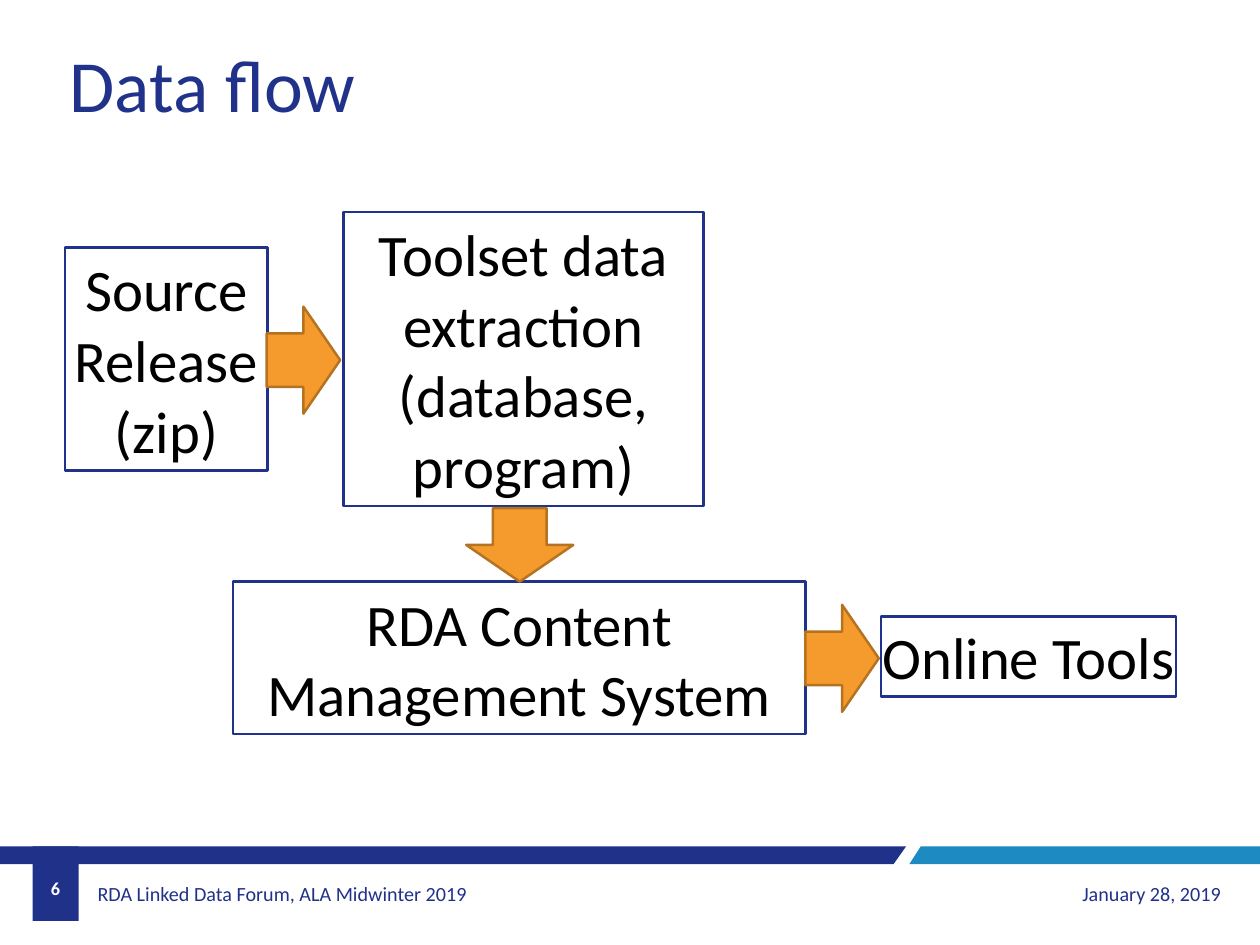
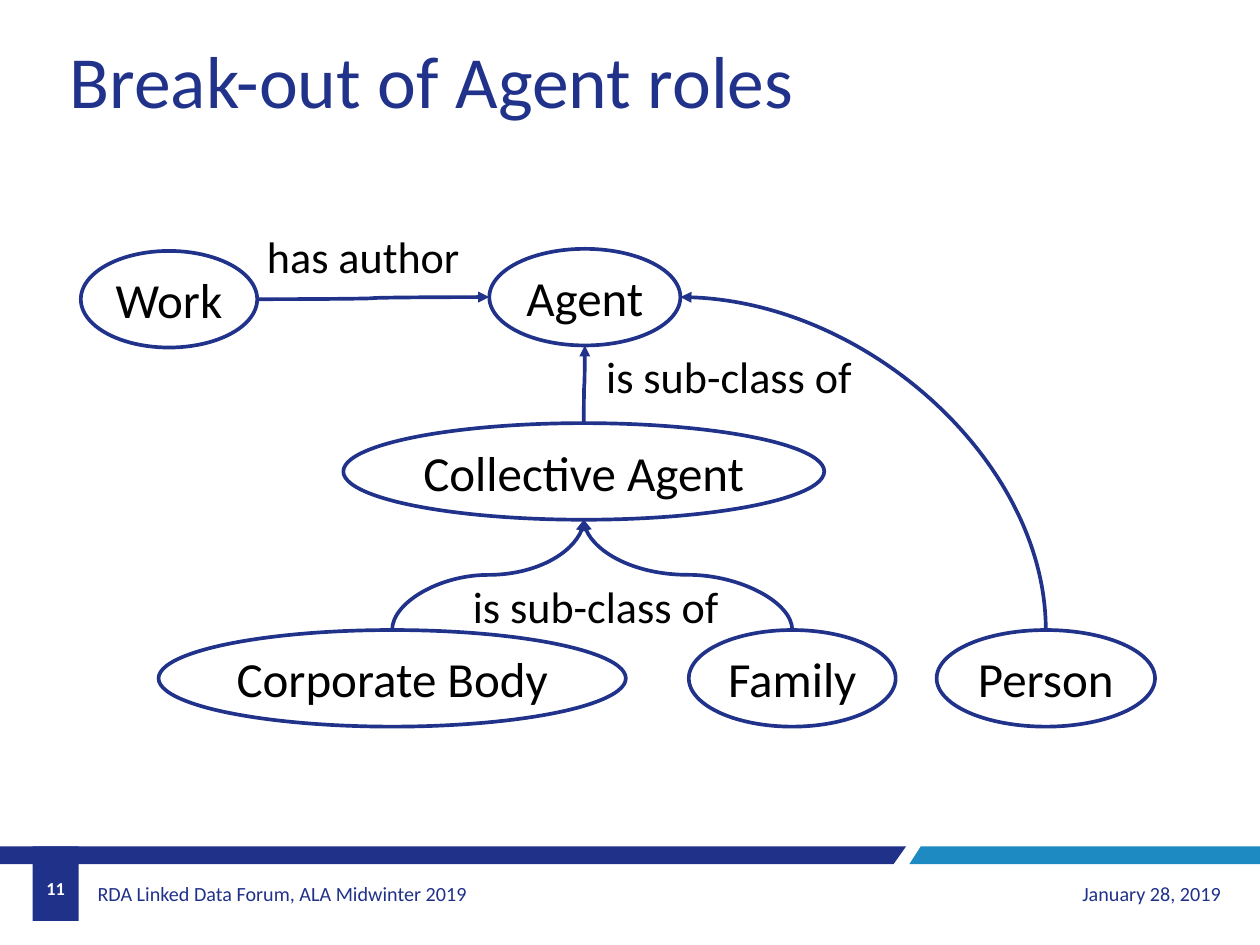
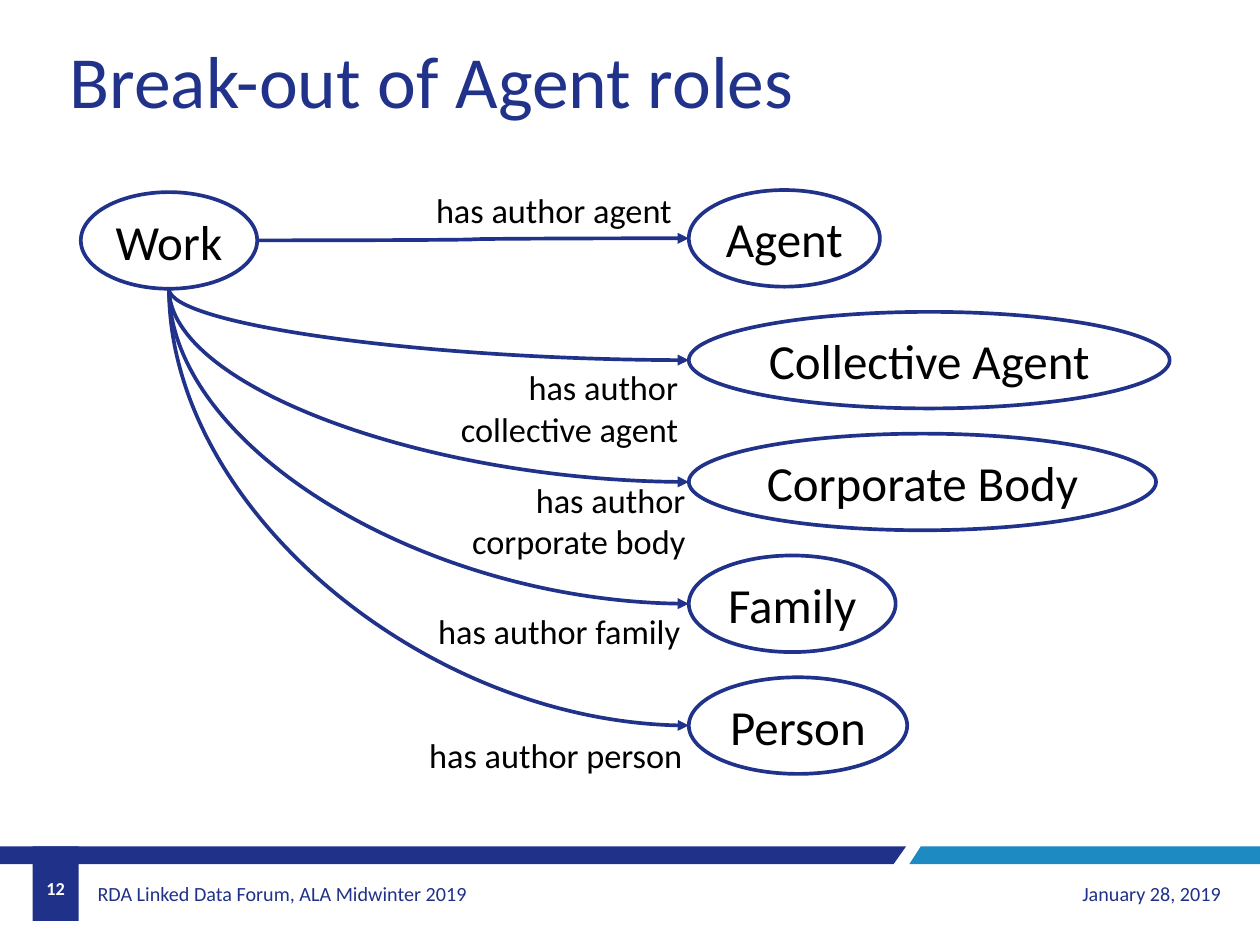
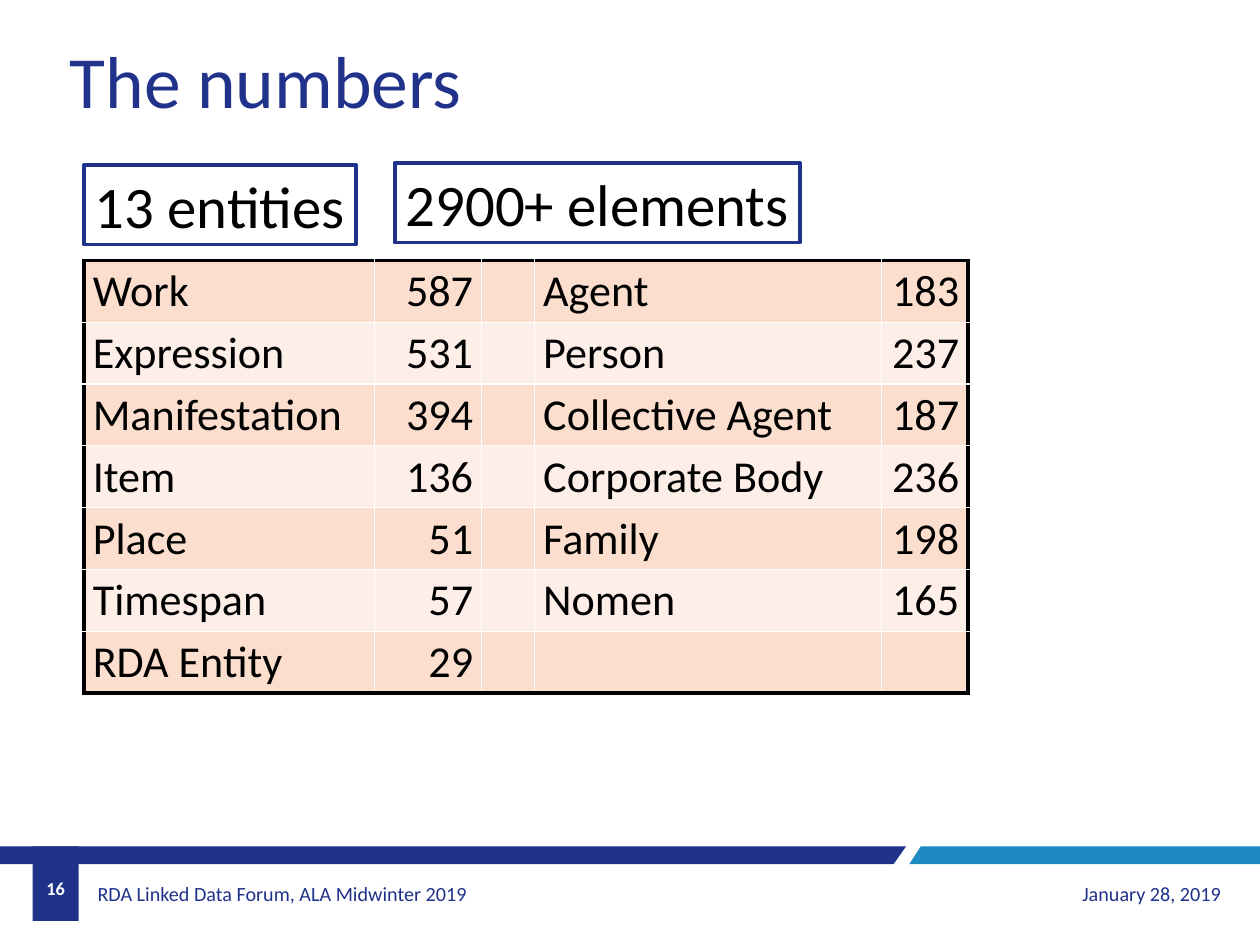
from dataclasses import dataclass
from typing import NamedTuple

from lxml.etree import SubElement
from pptx import Presentation
from pptx.dml.color import RGBColor
from pptx.enum.shapes import MSO_CONNECTOR, MSO_SHAPE
from pptx.enum.text import MSO_ANCHOR, PP_ALIGN
from pptx.oxml.ns import qn
from pptx.util import Emu, Inches, Pt

SLIDE_W, SLIDE_H = Inches(14.28), Inches(10.71)
GRID_COLS, GRID_ROWS = 120, 90
FONT = "Calibri"
NAVY, BAND, SKY = "21328A", "203189", "1D8BC1"
ORANGE, BROWN = "F59B2D", "B57321"
BLACK, WHITE = "000000", "FFFFFF"
PEACH, PALE = "FBDECD", "FDEFE8"
LEFT, CENTER, RIGHT = PP_ALIGN.LEFT, PP_ALIGN.CENTER, PP_ALIGN.RIGHT
TOP, MIDDLE = MSO_ANCHOR.TOP, MSO_ANCHOR.MIDDLE
BAND_TOP, BAND_BOTTOM = 80.6, 82.3
OVAL_H = 9.2
OVAL_W = {
    "Work": 16.8,
    "Agent": 18.2,
    "Collective Agent": 45.8,
    "Corporate Body": 44.5,
    "Family": 19.7,
    "Person": 20.8,
}
OVAL_SITES = {"top": 0, "left": 2, "bottom": 4, "right": 6}


class Box(NamedTuple):
    col: float
    row: float
    cols: float
    rows: float

    def emu(self) -> tuple:
        return x(self.col), y(self.row), x(self.cols), y(self.rows)


@dataclass
class Label:
    text: str
    box: Box
    size: float
    align: PP_ALIGN = LEFT
    color: str = BLACK
    bold: bool = False
    anchor: MSO_ANCHOR = TOP
    wrap: bool = False


@dataclass
class Frame:
    text: str
    box: Box
    line_width: float
    wrap: bool = False


class Arrow(NamedTuple):
    box: Box
    rotation: int = 0


class Oval(NamedTuple):
    name: str
    col: float
    row: float


class Link(NamedTuple):
    start: str
    start_side: str
    end: str
    end_side: str


def x(cols: float) -> Emu:
    return Emu(round(SLIDE_W * cols / GRID_COLS))


def y(rows: float) -> Emu:
    return Emu(round(SLIDE_H * rows / GRID_ROWS))


def rgb(color: str) -> RGBColor:
    return RGBColor.from_string(color)


def paint(sp, fill: str = "", line: str = "", width: float = 1) -> None:
    sp.shadow.inherit = False
    if fill:
        sp.fill.solid()
        sp.fill.fore_color.rgb = rgb(fill)
    else:
        sp.fill.background()
    if line:
        sp.line.color.rgb = rgb(line)
        sp.line.width = Pt(width)
    else:
        sp.line.fill.background()


def write(tf, text: str, size: float, color: str = BLACK,
          align: PP_ALIGN = LEFT, bold: bool = False) -> None:
    tf.text = text
    for p in tf.paragraphs:
        p.alignment = align
        for r in p.runs:
            r.font.name = FONT
            r.font.size = Pt(size)
            r.font.bold = bold
            r.font.color.rgb = rgb(color)


def add_label(s, label: Label):
    sp = s.shapes.add_textbox(*label.box.emu())
    tf = sp.text_frame
    write(tf, label.text, label.size, label.color, label.align, label.bold)
    tf.word_wrap = label.wrap
    tf.vertical_anchor = label.anchor
    return sp


def add_node(s, kind: MSO_SHAPE, frame: Frame, size: float):
    sp = s.shapes.add_shape(kind, *frame.box.emu())
    paint(sp, line=NAVY, width=frame.line_width)
    tf = sp.text_frame
    write(tf, frame.text, size, align=CENTER)
    tf.word_wrap = frame.wrap
    tf.vertical_anchor = MIDDLE
    return sp


def add_frame(s, frame: Frame) -> None:
    add_node(s, MSO_SHAPE.RECTANGLE, frame, 48)


def add_oval(s, oval: Oval):
    box = Box(oval.col, oval.row, OVAL_W[oval.name], OVAL_H)
    return add_node(s, MSO_SHAPE.OVAL, Frame(oval.name, box, 3), 40)


def add_arrow(s, arrow: Arrow) -> None:
    sp = s.shapes.add_shape(MSO_SHAPE.RIGHT_ARROW, *arrow.box.emu())
    paint(sp, ORANGE, BROWN, 2)
    sp.rotation = arrow.rotation


def side_point(sp, side: str) -> tuple:
    across = {"left": 0, "right": 2}.get(side, 1)
    down = {"top": 0, "bottom": 2}.get(side, 1)
    return sp.left + sp.width * across // 2, sp.top + sp.height * down // 2


def add_link(s, ovals: dict, link: Link) -> None:
    start, end = ovals[link.start], ovals[link.end]
    x1, y1 = side_point(start, link.start_side)
    x2, y2 = side_point(end, link.end_side)
    cx = s.shapes.add_connector(MSO_CONNECTOR.CURVE, x1, y1, x2, y2)
    cx.line.color.rgb = rgb(NAVY)
    cx.line.width = Pt(3)
    sp_pr = cx.element.spPr
    SubElement(sp_pr.find(qn("a:ln")), qn("a:tailEnd"), type="triangle")
    SubElement(sp_pr, qn("a:effectLst"))
    vertical_sides = ("top", "bottom")
    if link.start_side in vertical_sides:
        w, h = abs(y2 - y1), abs(x2 - x1)
        cx.left, cx.top = Emu((x1 + x2 - w) // 2), Emu((y1 + y2 - h) // 2)
        cx.width, cx.height = Emu(w), Emu(h)
        cx.rotation = 270
        xfrm = sp_pr.find(qn("a:xfrm"))
        xfrm.set("flipH", str(int(y2 > y1)))
        xfrm.set("flipV", str(int(x2 < x1)))
        if link.end_side not in vertical_sides:
            sp_pr.find(qn("a:prstGeom")).set("prst", "curvedConnector2")
    joints = cx.element.find(".//" + qn("p:cNvCxnSpPr"))
    for tag, sp, side in (("a:stCxn", start, link.start_side),
                          ("a:endCxn", end, link.end_side)):
        SubElement(joints, qn(tag), id=str(sp.shape_id), idx=str(OVAL_SITES[side]))


def add_ovals_and_links(s, ovals: list, links: list) -> None:
    shapes = {oval.name: add_oval(s, oval) for oval in ovals}
    for link in links:
        add_link(s, shapes, link)


def add_band(s, points: list, fill: str):
    corners = [(x(col), y(row)) for col, row in points]
    builder = s.shapes.build_freeform(*corners[0])
    builder.add_line_segments(corners[1:])
    sp = builder.convert_to_shape()
    paint(sp, fill)
    return sp


def fill_layout(layout, s) -> None:
    tab = s.shapes.add_shape(MSO_SHAPE.RECTANGLE, *Box(3.1, BAND_TOP, 4.4, 7.1).emu())
    paint(tab, BAND)
    footer = add_label(s, Label("RDA Linked Data Forum, ALA Midwinter 2019",
                                Box(8.7, 82.8, 36.6, 4.6), 16.4, color=BAND, anchor=MIDDLE))
    footer.text_frame.margin_left = footer.text_frame.margin_right = Inches(0.07)
    shared = [
        add_band(s, [(86.3, BAND_TOP), (0, BAND_TOP), (0, BAND_BOTTOM), (85.1, BAND_BOTTOM)], BAND),
        add_band(s, [(GRID_COLS, BAND_TOP), (87.7, BAND_TOP), (86.6, BAND_BOTTOM),
                     (GRID_COLS, BAND_BOTTOM)], SKY),
        tab,
        footer,
    ]
    for number, sp in enumerate(shared, 20):
        sp.element.nvSpPr.cNvPr.set("id", str(number))
        layout.shapes.element.append(sp.element)


def add_slide(prs, title: str, number: int, title_row: float = 2.9):
    layout = prs.slide_layouts[5]
    s = prs.slides.add_slide(layout)
    if len(prs.slides) == 1:
        fill_layout(layout, s)
    sp = s.shapes.title
    sp.left, sp.top, sp.width, sp.height = Box(5.8, title_row, 100, 10.4).emu()
    write(sp.text_frame, title, 60, NAVY)
    sp.text_frame.vertical_anchor = TOP
    add_label(s, Label("January 28, 2019", Box(86.3, 82.8, 30.8, 4.6), 16.4, RIGHT, BAND,
                       anchor=MIDDLE, wrap=True))
    add_label(s, Label(str(number), Box(3.1, 82.3, 4.4, 4.6), 14.9, CENTER, WHITE, True, MIDDLE))
    return s


def add_border(cell, side: str) -> None:
    ln = SubElement(cell._tc.get_or_add_tcPr(), qn("a:ln" + side), w=str(Pt(3)))
    SubElement(SubElement(ln, qn("a:solidFill")), qn("a:srgbClr"), val=BLACK)


def add_count_table(s, col: float, row: float, widths: list, row_height: float, rows: list) -> None:
    last_row, last_col = len(rows) - 1, len(widths) - 1
    box = Box(col, row, sum(widths), row_height * len(rows))
    table = s.shapes.add_table(len(rows), len(widths), *box.emu()).table
    table.first_row = table.horz_banding = False
    for column, width in zip(table.columns, widths):
        column.width = x(width)
    for i, values in enumerate(rows):
        for j, value in enumerate(values):
            cell = table.cell(i, j)
            outer = {"L": j == 0, "R": j == last_col, "T": i == 0, "B": i == last_row}
            for side, shown in outer.items():
                if shown:
                    add_border(cell, side)
            cell.fill.solid()
            cell.fill.fore_color.rgb = rgb(PALE if i % 2 else PEACH)
            if value:
                write(cell.text_frame, value, 36, align=RIGHT if value.isdigit() else LEFT)


def data_flow(prs) -> None:
    s = add_slide(prs, "Data flow", 6, 3.3)
    for frame in (
        Frame("Source\nRelease\n(zip)", Box(6.2, 23.6, 19.3, 21.2), 2.25),
        Frame("Toolset data extraction\n(database, program)", Box(32.7, 20.2, 34.3, 28), 2.25, True),
        Frame("RDA Content Management System", Box(22.2, 55.4, 54.5, 14.5), 2.25, True),
        Frame("Online Tools", Box(83.9, 58.7, 28.1, 7.6), 2.25),
    ):
        add_frame(s, frame)
    for arrow in (
        Arrow(Box(25.4, 29.2, 7, 10.2)),
        Arrow(Box(76.7, 57.6, 7, 10.2)),
        Arrow(Box(46, 46.8, 7, 10.2), 90),
    ):
        add_arrow(s, arrow)


def agent_classes(prs) -> None:
    s = add_slide(prs, "Break-out of Agent roles", 11)
    add_ovals_and_links(
        s,
        [
            Oval("Work", 7.7, 23.9),
            Oval("Agent", 46.6, 23.7),
            Oval("Person", 89.2, 60),
            Oval("Collective Agent", 32.7, 40.3),
            Oval("Corporate Body", 15.1, 60),
            Oval("Family", 65.6, 60),
        ],
        [
            Link("Work", "right", "Agent", "left"),
            Link("Collective Agent", "top", "Agent", "bottom"),
            Link("Person", "top", "Agent", "right"),
            Link("Corporate Body", "top", "Collective Agent", "bottom"),
            Link("Family", "top", "Collective Agent", "bottom"),
        ],
    )
    for label in (
        Label("has author", Box(24.6, 21.4, 20.2, 6), 36),
        Label("is sub-class of", Box(56.9, 32.9, 25.3, 6), 36),
        Label("is sub-class of", Box(44.2, 54.8, 25.3, 6), 36),
    ):
        add_label(s, label)


def author_roles(prs) -> None:
    s = add_slide(prs, "Break-out of Agent roles", 12)
    targets = ["Agent", "Collective Agent", "Corporate Body", "Family", "Person"]
    ovals = [Oval(name, 65.6, 18.1 + 11.6 * i) for i, name in enumerate(targets)]
    links = [Link("Work", "bottom" if i else "right", name, "left")
             for i, name in enumerate(targets)]
    add_ovals_and_links(s, [Oval("Work", 7.7, 18.3), *ovals], links)
    for text, box in (
        ("has author agent", Box(40.4, 17.6, 24.4, 4.8)),
        ("has author\ncollective agent", Box(42.8, 34.5, 22.6, 8.7)),
        ("has author\ncorporate body", Box(43.9, 45.2, 22.2, 8.7)),
        ("has author family", Box(40.6, 57.7, 25, 4.8)),
        ("has author person", Box(39.7, 69.5, 26.1, 4.8)),
    ):
        add_label(s, Label(text, box, 28, RIGHT))


def numbers(prs) -> None:
    s = add_slide(prs, "The numbers", 16)
    add_frame(s, Frame("13 entities", Box(8, 15.7, 25.9, 7.6), 3))
    add_frame(s, Frame("2900+ elements", Box(37.6, 15.5, 38.6, 7.6), 3))
    add_count_table(s, 8, 24.8, [27.7, 10.2, 5, 33.1, 8.2], 5.88, [
        ["Work", "587", "", "Agent", "183"],
        ["Expression", "531", "", "Person", "237"],
        ["Manifestation", "394", "", "Collective Agent", "187"],
        ["Item", "136", "", "Corporate Body", "236"],
        ["Place", "51", "", "Family", "198"],
        ["Timespan", "57", "", "Nomen", "165"],
        ["RDA Entity", "29", "", "", ""],
    ])


def main() -> None:
    prs = Presentation()
    prs.slide_width, prs.slide_height = SLIDE_W, SLIDE_H
    for build in (data_flow, agent_classes, author_roles, numbers):
        build(prs)
    prs.save("out.pptx")


if __name__ == "__main__":
    main()
